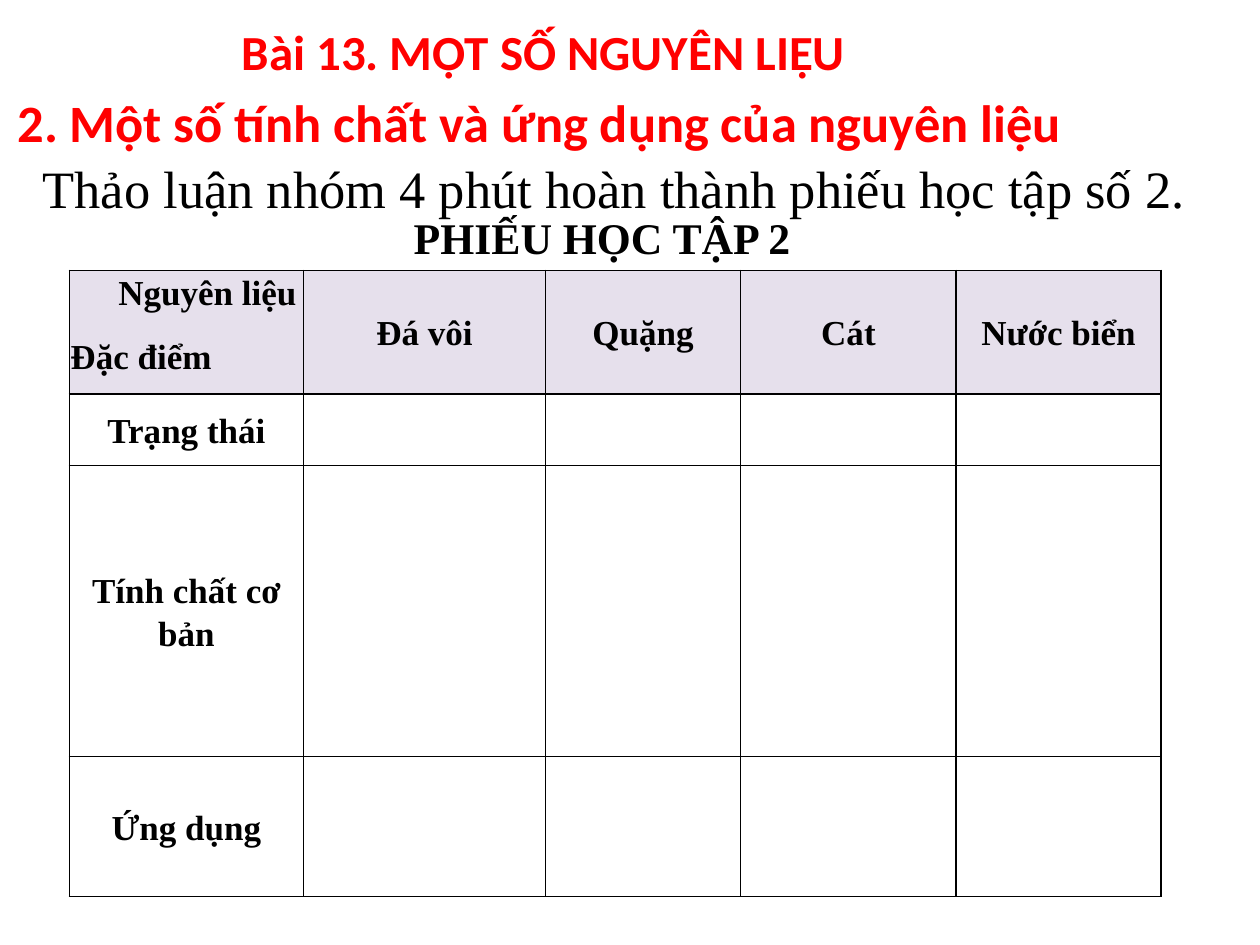
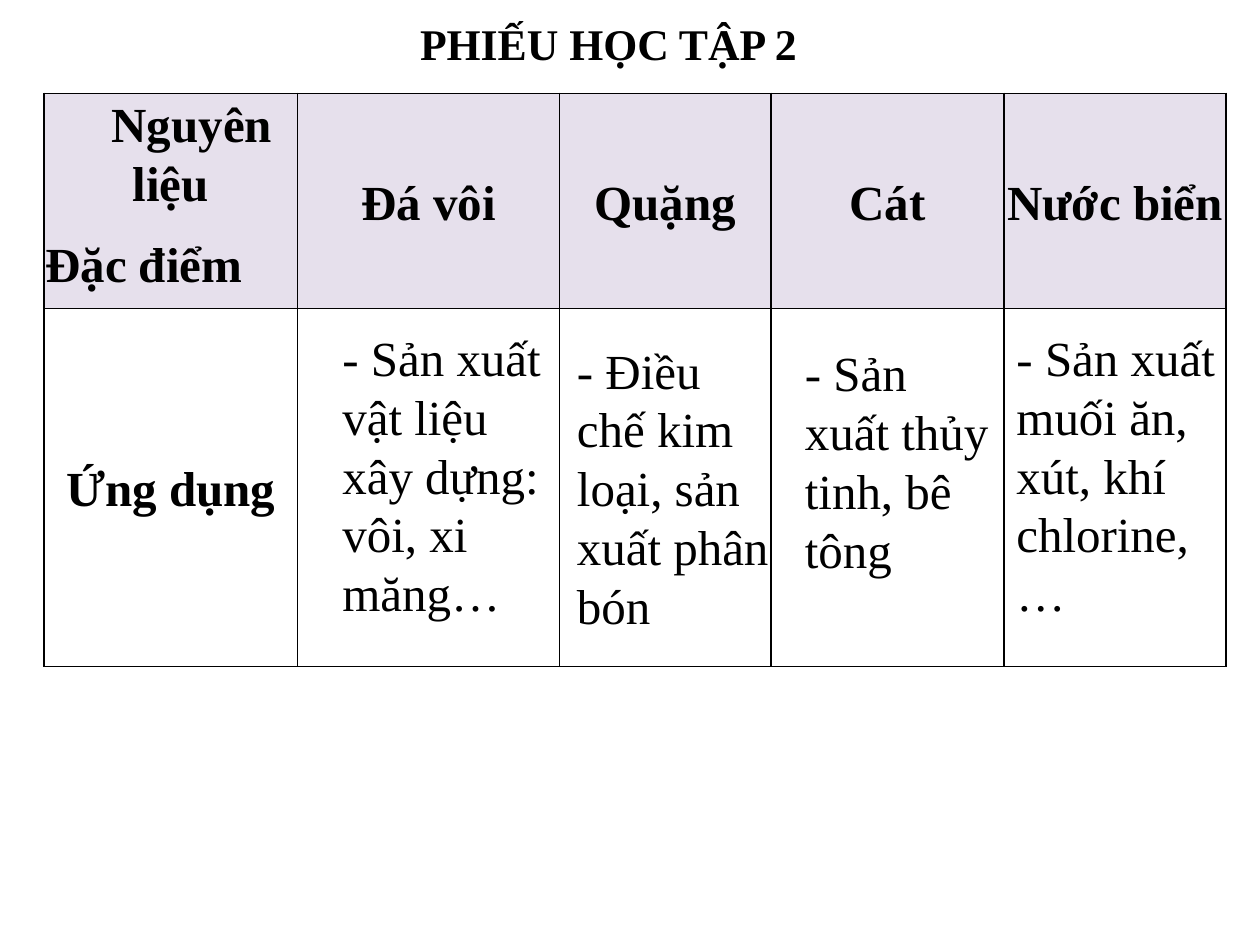
from dataclasses import dataclass

from lxml import etree
from pptx import Presentation
from pptx.dml.color import RGBColor
from pptx.enum.text import MSO_ANCHOR, MSO_AUTO_SIZE, PP_ALIGN
from pptx.oxml.ns import qn
from pptx.util import Pt

CENTER, JUSTIFY = PP_ALIGN.CENTER, PP_ALIGN.JUSTIFY
TOP, MIDDLE = MSO_ANCHOR.TOP, MSO_ANCHOR.MIDDLE
FIT_SHAPE = MSO_AUTO_SIZE.SHAPE_TO_FIT_TEXT

COLORS = {"heading": "FF0000", "ink": "000000", "header": "E6E0EC", "body": "FFFFFF"}
HEADING_FONT, BODY_FONT = "Calibri", "Times New Roman"

MATERIALS = ["Đá vôi", "Quặng", "Cát", "Nước biển"]
CORNER = ["Nguyên liệu", "Đặc điểm"]
WORKSHEET_TITLE = "PHIẾU HỌC TẬP 2"


@dataclass
class Caption:
    text: str
    left: float
    top: float
    width: float
    height: float
    size: float = 28
    font: str = BODY_FONT
    color: str = "ink"
    bold: bool = False
    indent: float = 0
    wrap: bool = True
    anchor: MSO_ANCHOR = TOP


@dataclass
class Worksheet:
    left: float
    top: float
    columns: list[float]
    rows: list[float]
    features: list[str]
    size: float


def style_paragraph(paragraph, size: float, font: str, color: str, bold: bool,
                    indent: float = 0) -> None:
    if indent:
        properties = paragraph._p.get_or_add_pPr()
        properties.set("marL", "0")
        properties.set("indent", str(Pt(indent)))
    for run in paragraph.runs:
        run.font.size = Pt(size)
        run.font.name = font
        run.font.bold = bold
        run.font.color.rgb = RGBColor.from_string(COLORS[color])


def add_caption(slide, caption: Caption) -> None:
    box = slide.shapes.add_textbox(Pt(caption.left), Pt(caption.top),
                                   Pt(caption.width), Pt(caption.height))
    frame = box.text_frame
    frame.word_wrap = caption.wrap
    frame.auto_size = FIT_SHAPE
    frame.vertical_anchor = caption.anchor
    frame.text = caption.text
    style_paragraph(frame.paragraphs[0], caption.size, caption.font, caption.color,
                    caption.bold, caption.indent)


def add_worksheet_title(slide, left: float, top: float) -> None:
    add_caption(slide, Caption(WORKSHEET_TITLE, left, top, 259, 37.5, 25, bold=True,
                               indent=27, wrap=False, anchor=MIDDLE))


def add_borders(cell) -> None:
    properties = cell._tc.get_or_add_tcPr()
    for side in ("a:lnL", "a:lnR", "a:lnT", "a:lnB"):
        border = etree.SubElement(properties, qn(side), w=str(Pt(1)))
        fill = etree.SubElement(border, qn("a:solidFill"))
        etree.SubElement(fill, qn("a:srgbClr"), val=COLORS["ink"])


def fill_cell(cell, lines: list[str], fill: str, size: float) -> None:
    add_borders(cell)
    cell.fill.solid()
    cell.fill.fore_color.rgb = RGBColor.from_string(COLORS[fill])
    cell.margin_left = cell.margin_right = Pt(0.7)
    cell.margin_top = cell.margin_bottom = 0
    is_corner = len(lines) > 1
    cell.vertical_anchor = TOP if is_corner else MIDDLE
    cell.text_frame.text = "\n".join(lines)
    for index, paragraph in enumerate(cell.text_frame.paragraphs):
        paragraph.alignment = JUSTIFY if index else CENTER
        paragraph.line_spacing = 1.1
        paragraph.space_before = Pt(6 if index else 0)
        paragraph.space_after = Pt(6)
        indent = 24 if is_corner and index == 0 else 0
        style_paragraph(paragraph, size, BODY_FONT, "ink", True, indent)


def add_worksheet(slide, sheet: Worksheet) -> None:
    table = slide.shapes.add_table(
        len(sheet.rows), len(sheet.columns), Pt(sheet.left), Pt(sheet.top),
        Pt(sum(sheet.columns)), Pt(sum(sheet.rows))).table
    table.first_row = table.horz_banding = False
    for column, width in zip(table.columns, sheet.columns):
        column.width = Pt(width)
    for row, height in zip(table.rows, sheet.rows):
        row.height = Pt(height)

    # Header row, then one row per feature with blank answers
    contents = [[CORNER] + [[material] for material in MATERIALS]]
    contents += [[[feature]] + [[""]] * len(MATERIALS) for feature in sheet.features]
    for row_index, row in enumerate(contents):
        for column_index, lines in enumerate(row):
            fill_cell(table.cell(row_index, column_index), lines,
                      "body" if row_index else "header", sheet.size)


def build_task_slide(slide) -> None:
    # Lesson headings
    add_caption(slide, Caption("Bài 13. MỘT SỐ NGUYÊN LIỆU", 131, 8.6, 510.5, 41, 28,
                               HEADING_FONT, "heading", True))
    add_caption(slide, Caption("2. Một số tính chất và ứng dụng của nguyên liệu",
                               2.9, 48.2, 697.7, 44, 30, HEADING_FONT, "heading", True))
    # Blank worksheet
    add_worksheet(slide, Worksheet(39.6, 154.5, [133.9, 138.2, 111.6, 123.1, 117.2],
                                   [70.6, 41, 166.3, 79.9],
                                   ["Trạng thái", "Tính chất cơ bản", "Ứng dụng"], 20))
    add_worksheet_title(slide, 202.3, 116.6)
    # Group task
    add_caption(slide, Caption("Thảo luận nhóm 4 phút hoàn thành phiếu học tập số 2.",
                               17.3, 85.7, 680.4, 44, 30))


def build_answer_slide(slide) -> None:
    add_worksheet(slide, Worksheet(25.2, 53.3, [144.7, 149.8, 121, 133.2, 126.7],
                                   [114, 204.5], ["Ứng dụng"], 28))
    add_worksheet_title(slide, 205.9, 5.8)
    # Uses of each material
    answers = [
        Caption("- Sản xuất vật liệu xây dựng: vôi, xi măng…", 188.6, 183.6, 144, 177),
        Caption("- Điều chế kim loại, sản xuất phân bón", 322.6, 190.8, 130.3, 177),
        Caption("- Sản xuất thủy tinh, bê tông", 452.9, 192.2, 125.3, 143),
        Caption("- Sản xuất muối ăn, xút, khí chlorine,…", 573.8, 183.6, 132.5, 177),
    ]
    for answer in answers:
        add_caption(slide, answer)


def main() -> None:
    deck = Presentation()
    deck.slide_width, deck.slide_height = Pt(720), Pt(540)
    blank = deck.slide_layouts[6]
    for build in (build_task_slide, build_answer_slide):
        build(deck.slides.add_slide(blank))
    deck.save("out.pptx")


if __name__ == "__main__":
    main()
